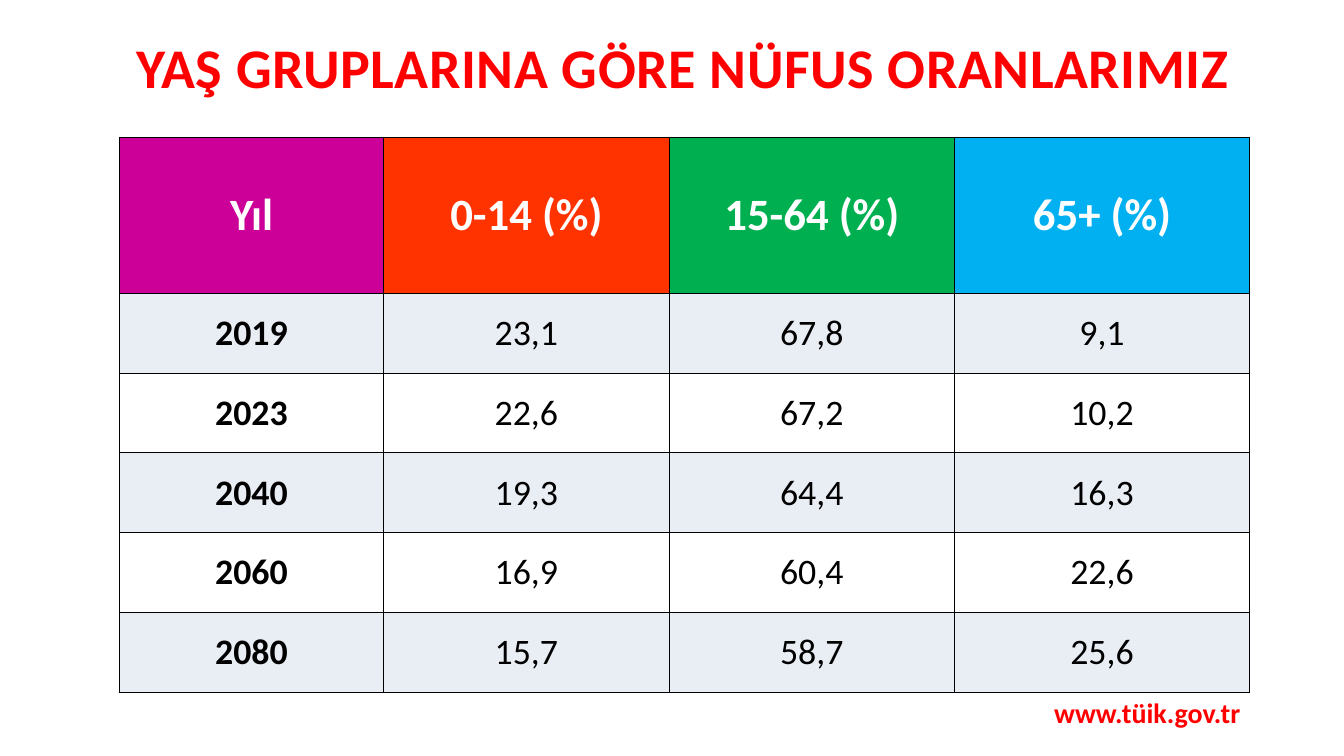
import pptx
import pptx.dml.color
import pptx.enum.text
import pptx.oxml
import pptx.oxml.ns
import pptx.util

Inches = pptx.util.Inches
RGBColor = pptx.dml.color.RGBColor

FONT = "Calibri"
RED = RGBColor(0xFF, 0x00, 0x00)
WHITE = RGBColor(0xFF, 0xFF, 0xFF)
BLACK = RGBColor(0x00, 0x00, 0x00)
BAND = RGBColor(0xE9, 0xED, 0xF4)
MAGENTA = RGBColor(0xCC, 0x00, 0x99)
ORANGE = RGBColor(0xFF, 0x33, 0x00)
GREEN = RGBColor(0x00, 0xB0, 0x50)
BLUE = RGBColor(0x00, 0xB0, 0xF0)

AGE_GROUPS = [("Yıl", MAGENTA), ("0-14 (%)", ORANGE), ("15-64 (%)", GREEN), ("65+ (%)", BLUE)]
POPULATION_SHARES = [
    ("2019", "23,1", "67,8", "9,1"),
    ("2023", "22,6", "67,2", "10,2"),
    ("2040", "19,3", "64,4", "16,3"),
    ("2060", "16,9", "60,4", "22,6"),
    ("2080", "15,7", "58,7", "25,6"),
]
COLUMN_WIDTHS = [3.28, 3.54, 3.54, 3.66]
HEADER_HEIGHT, YEAR_HEIGHT = 1.94, 0.99


def write_centred(text_frame, text, size, color, bold):
    """Set one centred line of text and return its run."""
    paragraph = text_frame.paragraphs[0]
    paragraph.text = text
    paragraph.alignment = pptx.enum.text.PP_ALIGN.CENTER
    run = paragraph.runs[0]
    run.font.name = FONT
    run.font.size = pptx.util.Pt(size)
    run.font.color.rgb = color
    run.font.bold = bold
    return run


def add_caption(slide, box, text, size):
    """Place a bold red line of text in the box and return its run."""
    caption = slide.shapes.add_textbox(*map(Inches, box))
    caption.text_frame.word_wrap = False
    caption.text_frame.auto_size = pptx.enum.text.MSO_AUTO_SIZE.SHAPE_TO_FIT_TEXT
    return write_centred(caption.text_frame, text, size, RED, True)


def add_cell_borders(cell):
    """Draw a thin black line on every side of a cell."""
    properties = cell._tc.get_or_add_tcPr()
    for position, side in enumerate(("lnL", "lnR", "lnT", "lnB")):
        border = pptx.oxml.parse_xml(
            f'<a:{side} {pptx.oxml.ns.nsdecls("a")} w="12700"><a:solidFill>'
            f'<a:srgbClr val="{BLACK}"/></a:solidFill></a:{side}>'
        )
        properties.insert(position, border)


def fill_cell(cell, text, size, color, bold, background):
    """Write and style one table cell."""
    cell.margin_left = cell.margin_right = Inches(0.17)
    cell.margin_top = cell.margin_bottom = Inches(0.06)
    cell.vertical_anchor = pptx.enum.text.MSO_ANCHOR.MIDDLE
    cell.fill.solid()
    cell.fill.fore_color.rgb = background
    write_centred(cell.text_frame, text, size, color, bold)
    add_cell_borders(cell)


def add_population_table(slide, box):
    """Place the table of population shares by year and age group."""
    row_count = len(POPULATION_SHARES) + 1
    table = slide.shapes.add_table(row_count, len(AGE_GROUPS), *map(Inches, box)).table
    for column, width in zip(table.columns, COLUMN_WIDTHS):
        column.width = Inches(width)
    for row_index, row in enumerate(table.rows):
        row.height = Inches(YEAR_HEIGHT if row_index else HEADER_HEIGHT)
    for column_index, (group, color) in enumerate(AGE_GROUPS):
        fill_cell(table.cell(0, column_index), group, 40, WHITE, True, color)
    for row_index, shares in enumerate(POPULATION_SHARES, start=1):
        background = BAND if row_index % 2 else WHITE
        for column_index, share in enumerate(shares):
            is_year = column_index == 0
            fill_cell(table.cell(row_index, column_index), share, 32, BLACK, is_year, background)


def main():
    """Build and save the slide."""
    presentation = pptx.Presentation()
    presentation.slide_width = Inches(16.67)
    presentation.slide_height = Inches(9.38)
    slide = presentation.slides.add_slide(presentation.slide_layouts[6])
    add_population_table(slide, (1.48, 1.7, 14.02, 6.9))
    title = add_caption(slide, (1.53, 0.36, 13.89, 0.94), "YAŞ GRUPLARINA GÖRE NÜFUS ORANLARIMIZ", 50)
    title.font._element.set("spc", "50")
    add_caption(slide, (12.96, 8.58, 2.54, 0.52), "www.tüik.gov.tr", 25)
    presentation.save("out.pptx")


if __name__ == "__main__":
    main()
